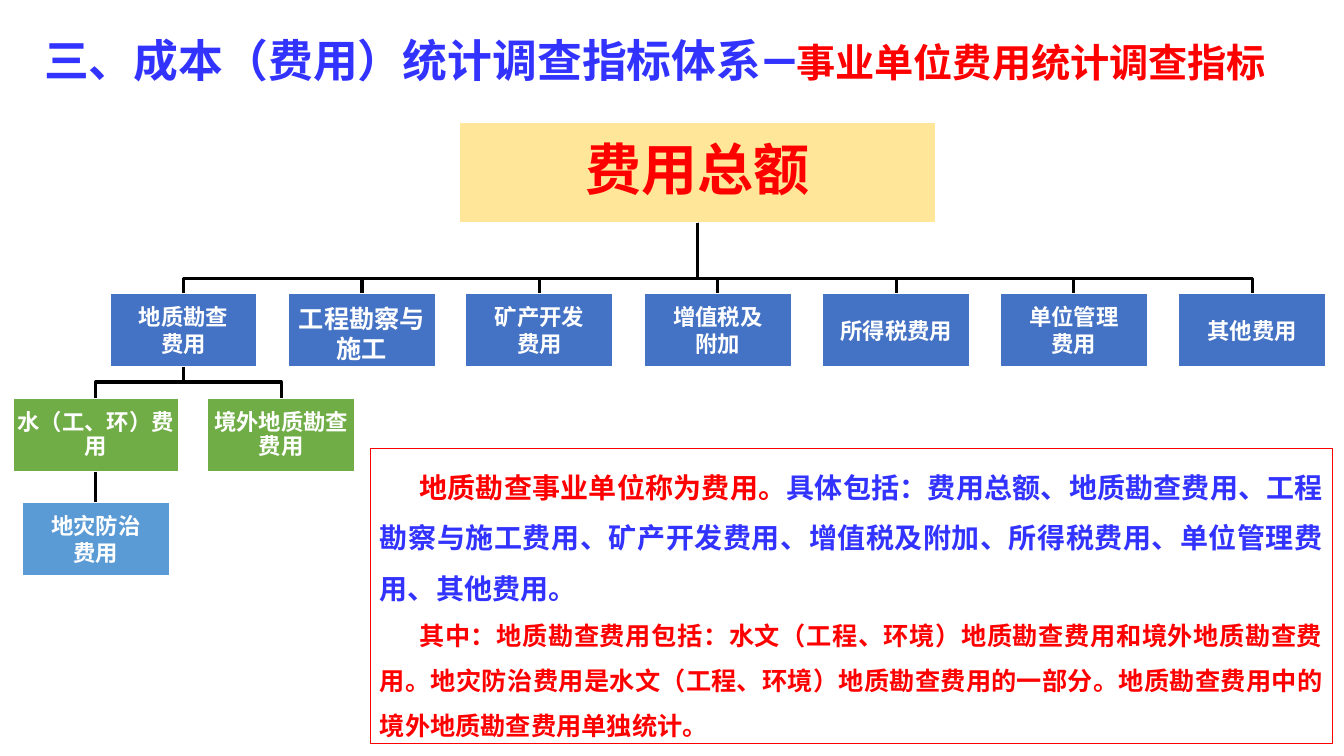
from pptx import Presentation
from pptx.dml.color import RGBColor
from pptx.enum.shapes import MSO_CONNECTOR, MSO_SHAPE
from pptx.enum.text import MSO_ANCHOR, PP_ALIGN
from pptx.oxml.ns import qn
from pptx.util import Pt
from lxml.etree import SubElement

PX = 9144
CJK = "Noto Sans CJK SC"
RED, BLUE, WHITE, BLACK = "FF0000", "3333FF", "FFFFFF", "000000"


def rgb(color):
    return RGBColor.from_string(color)


class OrgSlide:
    """Draws styled boxes, branches and text on one slide, measured in px."""

    def __init__(self, prs):
        self.s = prs.slides.add_slide(prs.slide_layouts[6])

    def style(self, font, size, color, name=CJK):
        font.size, font.bold, font.name = Pt(size), True, name
        font.color.rgb = rgb(color)

    def run(self, p, text, size, color, name=CJK):
        r = p.add_run()
        r.text = text
        self.style(r.font, size, color, name)
        SubElement(r.font._element, qn("a:ea")).set("typeface", name)

    def rect(self, x, y, w, h, fill, line, width):
        sp = self.s.shapes.add_shape(MSO_SHAPE.RECTANGLE, x * PX, y * PX, w * PX, h * PX)
        sp.shadow.inherit = False
        sp.fill.solid()
        sp.fill.fore_color.rgb = rgb(fill)
        sp.line.color.rgb = rgb(line)
        sp.line.width = Pt(width)
        sp.text_frame.word_wrap = True
        return sp

    def box(self, x, y, w, h, text, fill, size=16, color=WHITE, spacing=1.0, top=1):
        sp = self.rect(x, y, w, h, fill, WHITE, 1)
        tf = sp.text_frame
        tf.vertical_anchor = MSO_ANCHOR.MIDDLE
        tf.margin_left = tf.margin_right = tf.margin_bottom = PX
        tf.margin_top = top * PX
        for i, line in enumerate(text.split("\n")):
            p = tf.add_paragraph() if i else tf.paragraphs[0]
            p.alignment, p.line_spacing = PP_ALIGN.CENTER, spacing
            self.run(p, line, size, color)
        return sp

    def branch(self, parent, child, drop):
        x, y = parent.left + parent.width // 2, parent.top + parent.height
        end = child.left + child.width // 2
        bend = y + drop * PX
        fb = self.s.shapes.build_freeform(x, y)
        fb.add_line_segments([(x, bend), (end, bend), (end, child.top)], close=False)
        sp = fb.convert_to_shape()
        sp.shadow.inherit = False
        sp.fill.background()
        sp.line.color.rgb = rgb(BLACK)
        sp.line.width = Pt(2.25)

    def link(self, parent, child):
        c = self.s.shapes.add_connector(MSO_CONNECTOR.STRAIGHT, 0, 0, 0, 0)
        c.begin_connect(parent, 2)
        c.end_connect(child, 0)
        c.line.color.rgb = rgb(BLACK)
        c.line.width = Pt(2.25)
        SubElement(c._element.spPr, qn("a:effectLst"))

    def title(self, x, y, w, h, runs):
        tf = self.s.shapes.add_textbox(x * PX, y * PX, w * PX, h * PX).text_frame
        tf.word_wrap = True
        p = tf.paragraphs[0]
        p.line_spacing = Pt(30)
        for text, size, color in runs:
            self.run(p, text, size, color, "Roboto")

    def note(self, x, y, w, h, paragraphs):
        tf = self.rect(x, y, w, h, WHITE, RED, 0.75).text_frame
        tf.vertical_anchor = MSO_ANCHOR.TOP
        for i, runs in enumerate(paragraphs):
            p = tf.add_paragraph() if i else tf.paragraphs[0]
            p.alignment, p.line_spacing = PP_ALIGN.JUSTIFY, 1.5
            p._p.get_or_add_pPr().set("indent", str(39 * PX))
            for text, size, color in runs:
                self.run(p, text, size, color)


def main():
    prs = Presentation()
    prs.slide_width, prs.slide_height = 1333 * PX, 750 * PX
    slide = OrgSlide(prs)

    total = slide.box(456, 121, 472, 100, "费用总额", "FFE699", 40, RED, 0.9)
    names = ["地质勘查\n费用", "工程勘察与施工", "矿产开发\n费用", "增值税及\n附加",
             "所得税费用", "单位管理\n费用", "其他费用"]
    items = []
    for i, name in enumerate(names):
        size, top = (18, 8) if i == 1 else (16, 1)
        items.append(slide.box(round(109 + i * 530 / 3), 291, 146, 73, name, "4472C4", size, top=top))
    water = slide.box(13, 395, 164, 73, "水（工、环）费用", "70AD47", spacing=0.9)
    abroad = slide.box(206, 395, 146, 73, "境外地质勘查费用", "70AD47", spacing=0.9)
    hazard = slide.box(22, 498, 146, 73, "地灾防治\n费用", "5B9BD5")

    for item in items:
        slide.branch(total, item, 55)
    for part in (water, abroad):
        slide.branch(items[0], part, 15)
    slide.link(water, hazard)

    slide.title(34, 39, 1264, 54, [
        ("三、成本（费用）统计调查指标体系—", 32, BLUE),
        ("事业单位费用统计调查指标", 28, RED)])
    slide.note(367, 445, 955, 293, [
        [("地质勘查事业单位称为费用。", 20, RED),
         ("具体包括：费用总额、地质勘查费用、工程勘察与施工费用、矿产开发费用、增值税及附加、"
          "所得税费用、单位管理费用、其他费用。", 20, BLUE)],
        [("其中：地质勘查费用包括：水文（工程、环境）地质勘查费用和境外地质勘查费用。"
          "地灾防治费用是水文（工程、环境）地质勘查费用的一部分。"
          "地质勘查费用中的境外地质勘查费用单独统计。", 18, RED)]])
    prs.save("out.pptx")


if __name__ == "__main__":
    main()
